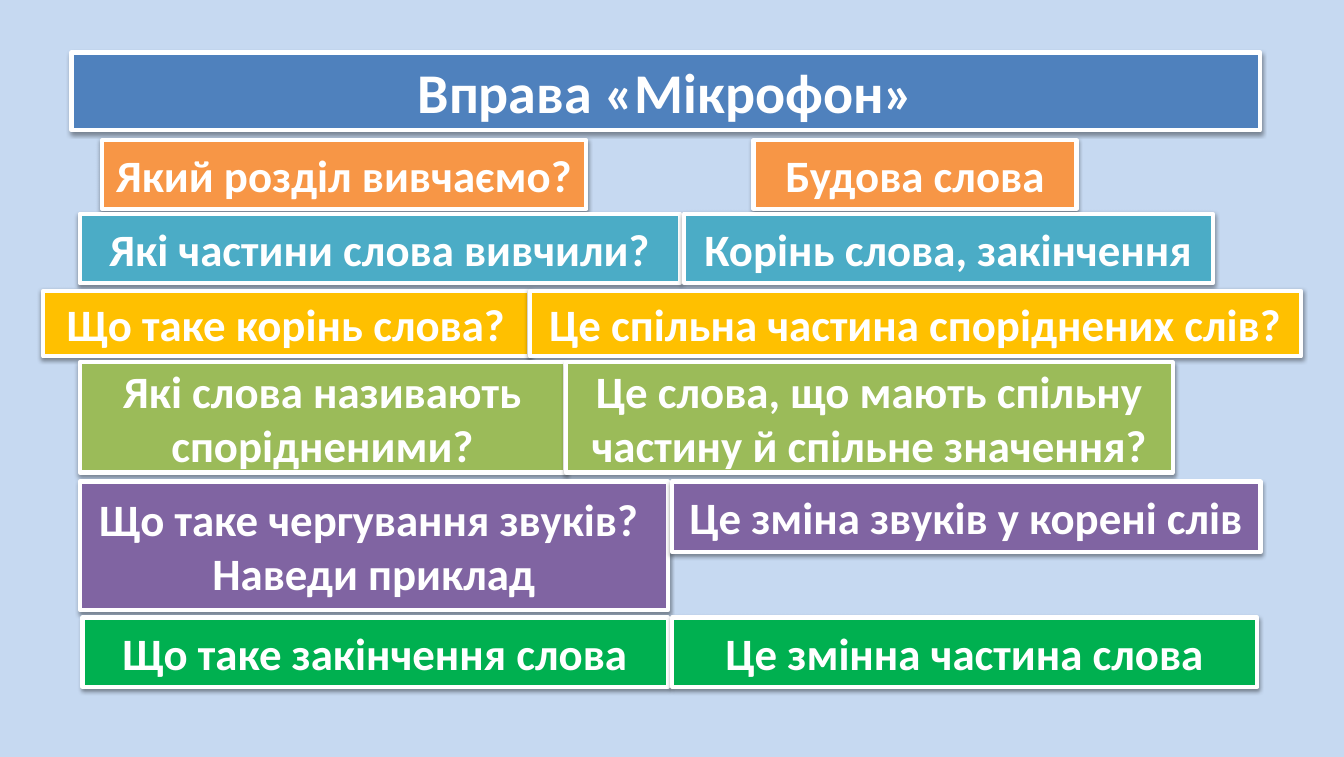
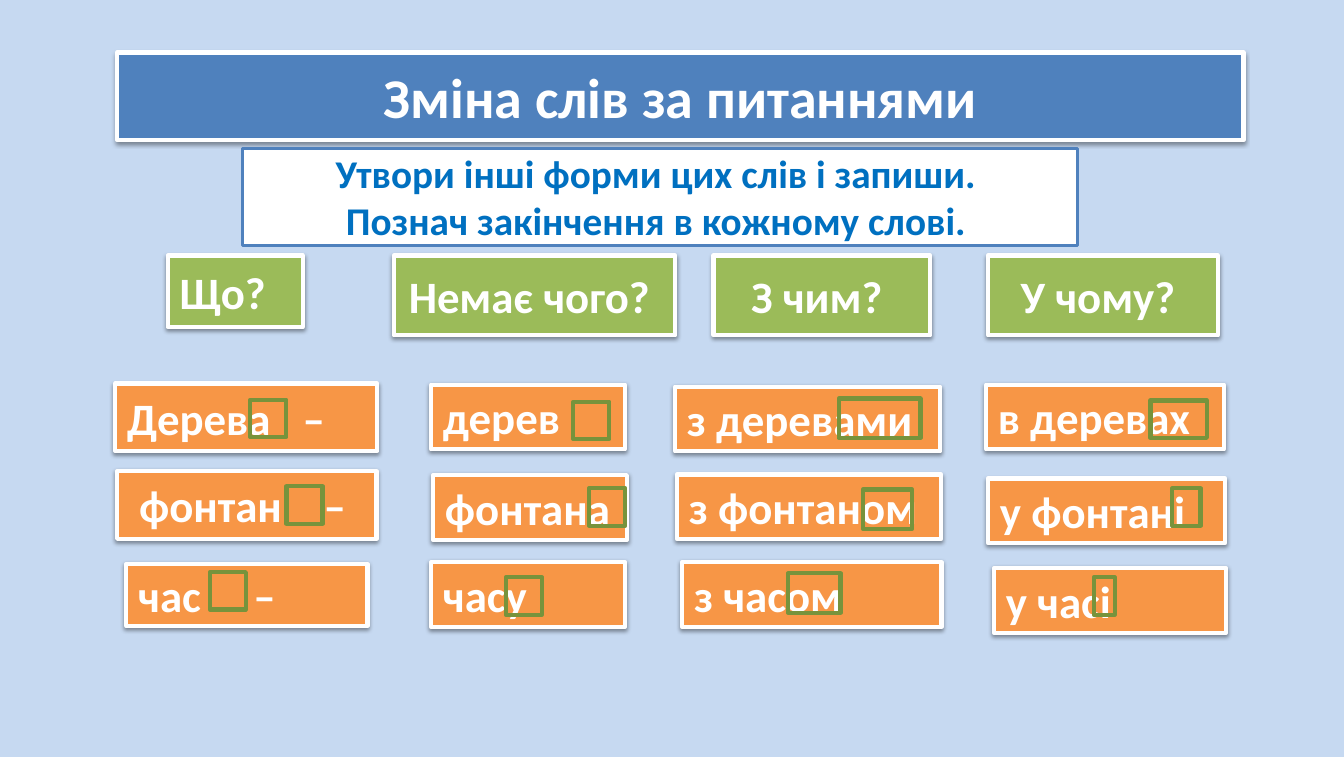
from dataclasses import dataclass
from lxml import etree
from pptx import Presentation
from pptx.dml.color import RGBColor
from pptx.enum import shapes, text
from pptx.oxml import ns
from pptx.util import Cm, Pt


@dataclass(frozen=True)
class Theme:
    back: str = "C6D9F1"
    blue: str = "4F81BD"
    orange: str = "F79646"
    teal: str = "4BACC6"
    gold: str = "FFC000"
    olive: str = "9BBB59"
    purple: str = "8064A2"
    green: str = "00B050"
    moss: str = "77933C"
    ink: str = "0070C0"
    white: str = "FFFFFF"
    font: str = "Calibri"
    head: int = 40
    body: int = 32
    note: int = 28
    edge: int = 3


T = Theme()
MID = text.PP_ALIGN.CENTER
LEFT = text.PP_ALIGN.LEFT


def rgb(tone):
    return RGBColor.from_string(tone)


def child(node, tag, **attrs):
    return etree.SubElement(node, ns.qn(tag), attrs)


class Deck:
    def __init__(self):
        self.prs = Presentation()
        self.prs.slide_width, self.prs.slide_height = Cm(33.83), Cm(19.05)
        fill = self.prs.slide_master.background.fill
        fill.solid()
        fill.fore_color.rgb = rgb(T.back)
        self.slide = None

    def start(self, title, box):
        """Add a slide with its title band."""
        self.slide = self.prs.slides.add_slide(self.prs.slide_layouts[5])
        band = self.slide.shapes.title
        band.left, band.top, band.width, band.height = map(Cm, box)
        self.paint(band, T.blue, T.white, T.edge)
        self.shade(band)
        self.label(band, title, T.head)

    def rect(self, box, fill, line, edge):
        shape = self.slide.shapes.add_shape(
            shapes.MSO_SHAPE.RECTANGLE, *map(Cm, box))
        self.paint(shape, fill, line, edge)
        return shape

    def paint(self, shape, fill, line, edge):
        if fill:
            shape.fill.solid()
            shape.fill.fore_color.rgb = rgb(fill)
        else:
            shape.fill.background()
        shape.line.color.rgb = rgb(line)
        shape.line.width = Pt(edge)
        shape.shadow.inherit = False

    def shade(self, shape):
        """Give the shape a soft shadow below."""
        effects = shape._element.spPr.find(ns.qn("a:effectLst"))
        drop = child(effects, "a:outerShdw", blurRad=str(Pt(3.1)),
                     dist=str(Pt(1.6)), dir="5400000", rotWithShape="0")
        tone = child(drop, "a:srgbClr", val="000000")
        child(tone, "a:alpha", val="38000")

    def label(self, shape, words, size, tone=T.white, align=MID):
        frame = shape.text_frame
        frame.text = words
        frame.word_wrap = True
        frame.auto_size = text.MSO_AUTO_SIZE.NONE
        frame.vertical_anchor = text.MSO_ANCHOR.MIDDLE
        frame.margin_left = frame.margin_right = Cm(0.3)
        frame.margin_top = frame.margin_bottom = Cm(0.15)
        for para in frame.paragraphs:
            para.alignment = align
            font = para.font
            font.name, font.size, font.bold = T.font, Pt(size), True
            font.color.rgb = rgb(tone)

    def card(self, words, box, fill, align=MID):
        shape = self.rect(box, fill, T.white, T.edge)
        self.shade(shape)
        self.label(shape, words, T.body, align=align)
        return shape

    def dashed(self, words, box, fill, stop, inset):
        """Add a card whose dash stands at a tab stop."""
        shape = self.card(words + "\t–", box, fill, LEFT)
        shape.text_frame.margin_left = Cm(inset)
        props = shape.text_frame.paragraphs[0]._p.get_or_add_pPr()
        tabs = etree.Element(ns.qn("a:tabLst"))
        child(tabs, "a:tab", pos=str(Cm(stop)), algn="l")
        props.insert(0, tabs)

    def note(self, words, box):
        shape = self.rect(box, T.white, T.blue, 2)
        self.label(shape, words, T.note, T.ink)

    def ending(self, box):
        self.rect(box, None, T.moss, T.edge)


def quiz(deck):
    deck.start("Вправа «Мікрофон»", (1.8, 1.32, 29.92, 1.96))
    # Rows: colour, top, then cards as left, width, height, words
    rows = [
        (T.orange, 3.53, (2.57, 12.19, 1.73, "Який розділ вивчаємо?"),
         (18.97, 8.13, 1.73, "Будова слова")),
        (T.teal, 5.38, (2.01, 15.11, 1.75, "Які частини слова вивчили?"),
         (17.22, 13.31, 1.75, "Корінь слова, закінчення")),
        (T.gold, 7.32, (1.09, 12.22, 1.65, "Що таке корінь слова?"),
         (13.34, 19.41, 1.65, "Це спільна частина споріднених слів?")),
        (T.olive, 9.12,
         (2.01, 12.22, 2.77, "Які слова називають спорідненими?"),
         (14.25, 15.27, 2.77,
          "Це слова, що мають спільну частину й спільне значення?")),
        (T.purple, 12.12,
         (2.01, 14.81, 3.23, "Що таке чергування звуків? \nНаведи приклад"),
         (16.92, 14.81, 1.78, "Це зміна звуків у корені слів")),
        (T.green, 15.54, (2.08, 14.73, 1.75, "Що таке закінчення слова"),
         (16.92, 14.73, 1.75, "Це змінна частина слова")),
    ]
    for tone, top, *cards in rows:
        for left, width, high, words in cards:
            deck.card(words, (left, top, width, high), tone)


def forms(deck):
    deck.start("Зміна слів за питаннями", (2.95, 1.32, 28.35, 2.21))
    deck.note("Утвори інші форми цих слів і запиши. \n"
              "Познач закінчення в кожному слові. ", (6.1, 3.73, 21.03, 2.44))

    # Questions: left, width, height, alignment
    for words, left, width, high, align in [
            ("Що?", 4.22, 3.4, 1.8, LEFT),
            ("Немає чого? ", 9.91, 7.09, 2.01, MID),
            ("З чим? ", 17.96, 5.46, 2.01, MID),
            ("У чому? ", 24.87, 5.79, 2.01, MID)]:
        deck.card(words, (left, 6.43, width, high), T.olive, align)

    # First forms: card, tab stop, inset, ending frame
    for words, box, stop, inset, spot in [
            ("Дерева", (2.9, 9.65, 6.6, 1.7), 4.42, 0.3, (6.3, 10.06)),
            ("фонтан", (2.95, 11.86, 6.53, 1.7), 4.65, 0.55, (7.21, 12.24)),
            ("час", (3.18, 14.2, 6.07, 1.55), 2.9, 0.3, (5.28, 14.4))]:
        deck.dashed(words, box, T.orange, stop, inset)
        deck.ending((*spot, 0.91, 0.94))

    # Other forms by column: frame height, then left, top, width, frame
    columns = [
        (0.94, [("дерев", 10.85, 9.68, 4.88, (14.43, 10.11, 0.91)),
                ("фонтана", 10.9, 11.96, 4.88, (14.83, 12.29, 0.91)),
                ("часу", 10.85, 14.15, 4.88, (12.73, 14.53, 0.91))]),
        (0.99, [("з деревами", 16.99, 9.73, 6.68, (21.11, 10.03, 2.06)),
                ("з фонтаном", 17.04, 11.94, 6.65, (21.72, 12.32, 1.24)),
                ("з часом", 17.17, 14.15, 6.53, (19.84, 14.43, 1.32))]),
        (0.94, [("в деревах", 24.82, 9.68, 5.99, (28.96, 10.08, 1.42)),
                ("у фонтані", 24.87, 12.04, 5.97, (29.51, 12.29, 0.71)),
                ("у часі", 25.02, 14.3, 5.84, (27.53, 14.53, 0.53))]),
    ]
    for high, cards in columns:
        for words, left, top, width, spot in cards:
            deck.card(words, (left, top, width, 1.63), T.orange, LEFT)
            deck.ending((*spot, high))


def main():
    deck = Deck()
    quiz(deck)
    forms(deck)
    deck.prs.save("out.pptx")


if __name__ == "__main__":
    main()
